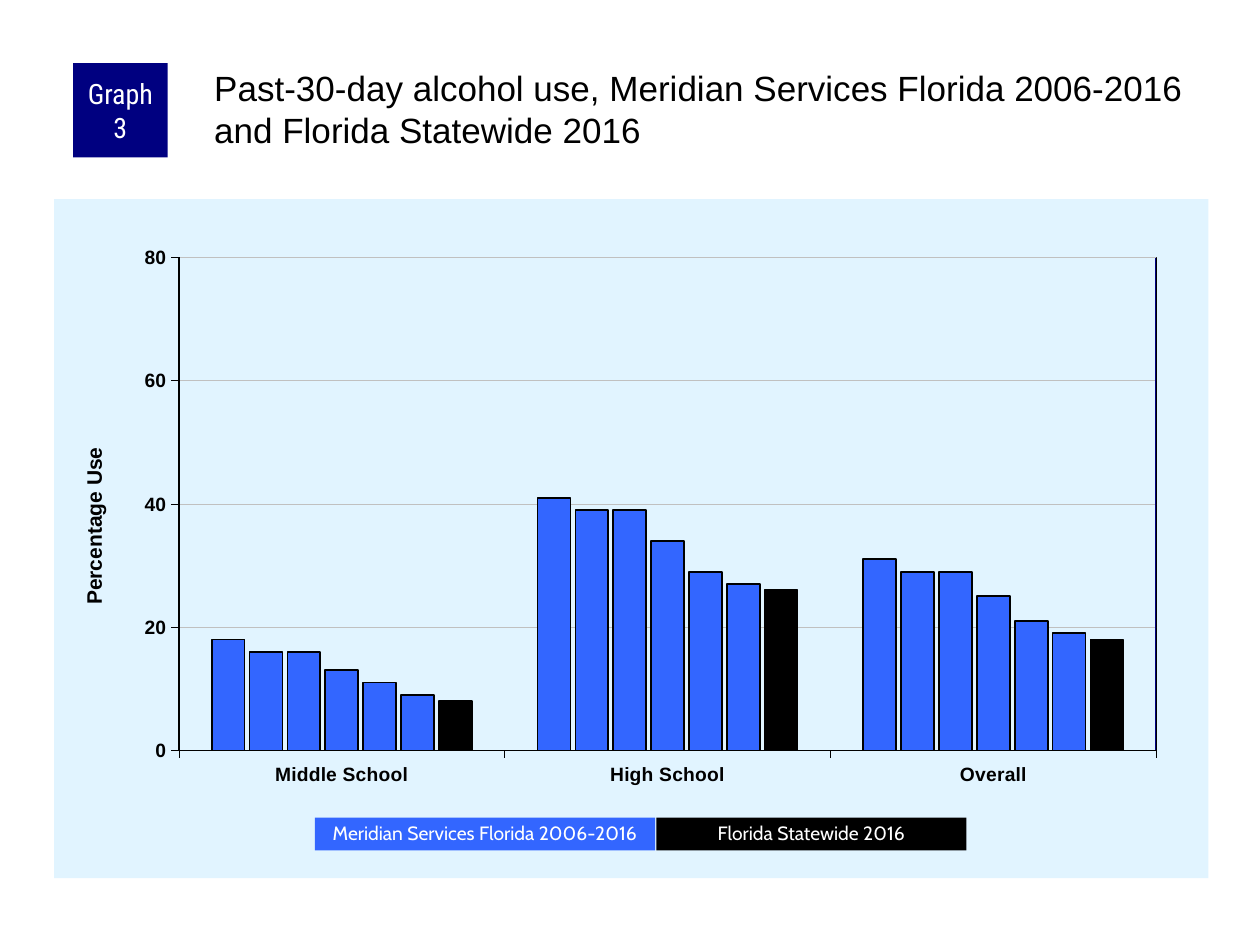
from pptx import Presentation
from pptx.chart.data import CategoryChartData
from pptx.dml.color import RGBColor
from pptx.enum.chart import XL_CHART_TYPE as ChartType, XL_TICK_MARK as TickMark
from pptx.enum.shapes import MSO_CONNECTOR as Connector, MSO_SHAPE as Shape
from pptx.enum.text import MSO_ANCHOR as Anchor, PP_ALIGN as Align
from pptx.oxml import parse_xml
from pptx.oxml.ns import nsdecls, qn
from pptx.util import Inches, Pt

BLACK = RGBColor(0x00, 0x00, 0x00)
WHITE = RGBColor(0xFF, 0xFF, 0xFF)
NAVY = RGBColor(0x00, 0x00, 0x80)
BLUE = RGBColor(0x33, 0x66, 0xFF)
PALE_BLUE = RGBColor(0xE1, 0xF4, 0xFF)
GRAY = RGBColor(0xC0, 0xC0, 0xC0)

REGION = "Meridian Services Florida 2006-2016"
STATE = "Florida Statewide 2016"
CATEGORIES = ["Middle School", "High School", "Overall"]
SURVEYS = [(18, 41, 31), (16, 39, 29), (16, 39, 29), (13, 34, 25),
           (11, 29, 21), (9, 27, 19), (8, 26, 18)]


def set_layout(parent, position, **fractions):
    """Place a chart part by fractions of the chart area."""
    for layout in parent.findall(qn("c:layout")):
        parent.remove(layout)
    target = '<c:layoutTarget val="inner"/>' if "w" in fractions else ""
    modes = "".join(f'<c:{key}Mode val="edge"/>' for key in "xy")
    values = "".join(f'<c:{key} val="{value}"/>' for key, value in fractions.items())
    parent.insert(position, parse_xml(
        f'<c:layout {nsdecls("c")}><c:manualLayout>{target}{modes}{values}'
        '</c:manualLayout></c:layout>'))


def area_properties(fill, line):
    """Return chart shape properties; None means no fill or no line."""
    def paint(color):
        if color is None:
            return "<a:noFill/>"
        return f'<a:solidFill><a:srgbClr val="{color}"/></a:solidFill>'
    return parse_xml(f'<c:spPr {nsdecls("c", "a")}>{paint(fill)}'
                     f'<a:ln w="12700">{paint(line)}</a:ln></c:spPr>')


def format_font(font, name, size, color, bold=False):
    font.name, font.size, font.bold = name, Pt(size), bold
    font.color.rgb = color


def format_line(line, color, width):
    line.color.rgb = color
    line.width = Pt(width)


class SlideBuilder:
    """Holds the fonts and the current slide."""
    body_font = "Arial"
    badge_font = "Roboto Condensed"
    legend_font = "Cabin"

    def __init__(self, slide):
        self.slide = slide

    def set_text(self, shape, text, font, size, color, insets, align, spacing=None):
        frame = shape.text_frame
        frame.text = text
        frame.word_wrap = True
        (frame.margin_left, frame.margin_top,
         frame.margin_right, frame.margin_bottom) = map(Inches, insets)
        paragraph = frame.paragraphs[0]
        paragraph.alignment = align
        if spacing:
            paragraph.line_spacing = spacing
        format_font(paragraph.runs[0].font, font, size, color)
        return frame

    def box(self, bounds, fill, text, font, size, insets, spacing=None):
        shape = self.slide.shapes.add_shape(Shape.RECTANGLE, *map(Inches, bounds))
        shape.shadow.inherit = False
        shape.fill.solid()
        shape.fill.fore_color.rgb = fill
        shape.line.fill.background()
        frame = self.set_text(shape, text, font, size, WHITE, insets, Align.CENTER, spacing)
        frame.vertical_anchor = Anchor.MIDDLE

    def badge(self, bounds, text):
        self.box(bounds, NAVY, text, self.badge_font, 16, (0.05, 0, 0.05, 0))

    def legend_entry(self, bounds, fill, text):
        self.box(bounds, fill, text, self.legend_font, 11, (0.1, 0.05, 0.1, 0.05), 0.9)

    def title(self, bounds, text):
        shape = self.slide.shapes.add_textbox(*map(Inches, bounds))
        self.set_text(shape, text, self.body_font, 20, BLACK, (0.03, 0.03, 0, 0), Align.LEFT)

    def line(self, start, end, color, width):
        connector = self.slide.shapes.add_connector(
            Connector.STRAIGHT, *map(Inches, start + end))
        format_line(connector.line, color, width)
        connector._element.spPr.append(parse_xml(f'<a:effectLst {nsdecls("a")}/>'))

    def axis(self, axis):
        axis.major_tick_mark = TickMark.OUTSIDE
        axis.minor_tick_mark = TickMark.NONE
        format_line(axis.format.line, BLACK, 0.25)
        format_font(axis.tick_labels.font, self.body_font, 11, BLACK, True)

    def column_chart(self, bounds):
        data = CategoryChartData(number_format="0")
        data.categories = CATEGORIES
        for number, values in enumerate(SURVEYS, 1):
            data.add_series(f"Series {number}", values)
        chart = self.slide.shapes.add_chart(
            ChartType.COLUMN_CLUSTERED, *map(Inches, bounds), data).chart
        format_font(chart.font, self.body_font, 8, BLACK)
        chart.has_legend = False
        chart.has_title = False

        plot = chart.plots[0]
        plot.vary_by_categories = False
        plot.gap_width, plot.overlap = 200, -15
        for series in plot.series:
            series.format.fill.solid()
            series.format.fill.fore_color.rgb = BLUE
            format_line(series.format.line, BLACK, 1)
        series.format.fill.fore_color.rgb = BLACK  # the last one is the state

        self.axis(chart.category_axis)
        value_axis = chart.value_axis
        self.axis(value_axis)
        value_axis.minimum_scale, value_axis.maximum_scale = 0, 80
        value_axis.major_unit = 20
        format_line(value_axis.major_gridlines.format.line, GRAY, 0.25)
        axis_title = value_axis.axis_title
        axis_title.text_frame.text = "Percentage Use"
        run = axis_title.text_frame.paragraphs[0].runs[0]
        format_font(run.font, self.body_font, 12, BLACK, True)
        set_layout(axis_title._element, 1, x=0.02, y=0.36)

        chart_part = chart._chartSpace.find(qn("c:chart"))
        chart_part.addnext(area_properties(PALE_BLUE, None))
        plot_area = chart_part.find(qn("c:plotArea"))
        set_layout(plot_area, 0, x=0.108, y=0.086, w=0.847, h=0.726)
        plot_area.append(area_properties(None, BLACK))


def main():
    presentation = Presentation()
    presentation.slide_width, presentation.slide_height = Inches(10), Inches(7.5)
    slide = presentation.slides.add_slide(presentation.slide_layouts[6])
    builder = SlideBuilder(slide)
    builder.column_chart((0.43, 1.58, 9.16, 5.39))
    builder.line((9.17, 2.05), (9.17, 5.95), NAVY, 1)
    builder.badge((0.58, 0.5, 0.75, 0.75), "Graph 3")
    builder.title((1.67, 0.5, 7.92, 0.83),
                  f"Past-30-day alcohol use, {REGION} and {STATE}")
    builder.legend_entry((2.5, 6.49, 2.7, 0.26), BLUE, REGION)
    builder.legend_entry((5.21, 6.49, 2.46, 0.26), BLACK, STATE)
    presentation.save("out.pptx")


if __name__ == "__main__":
    main()
